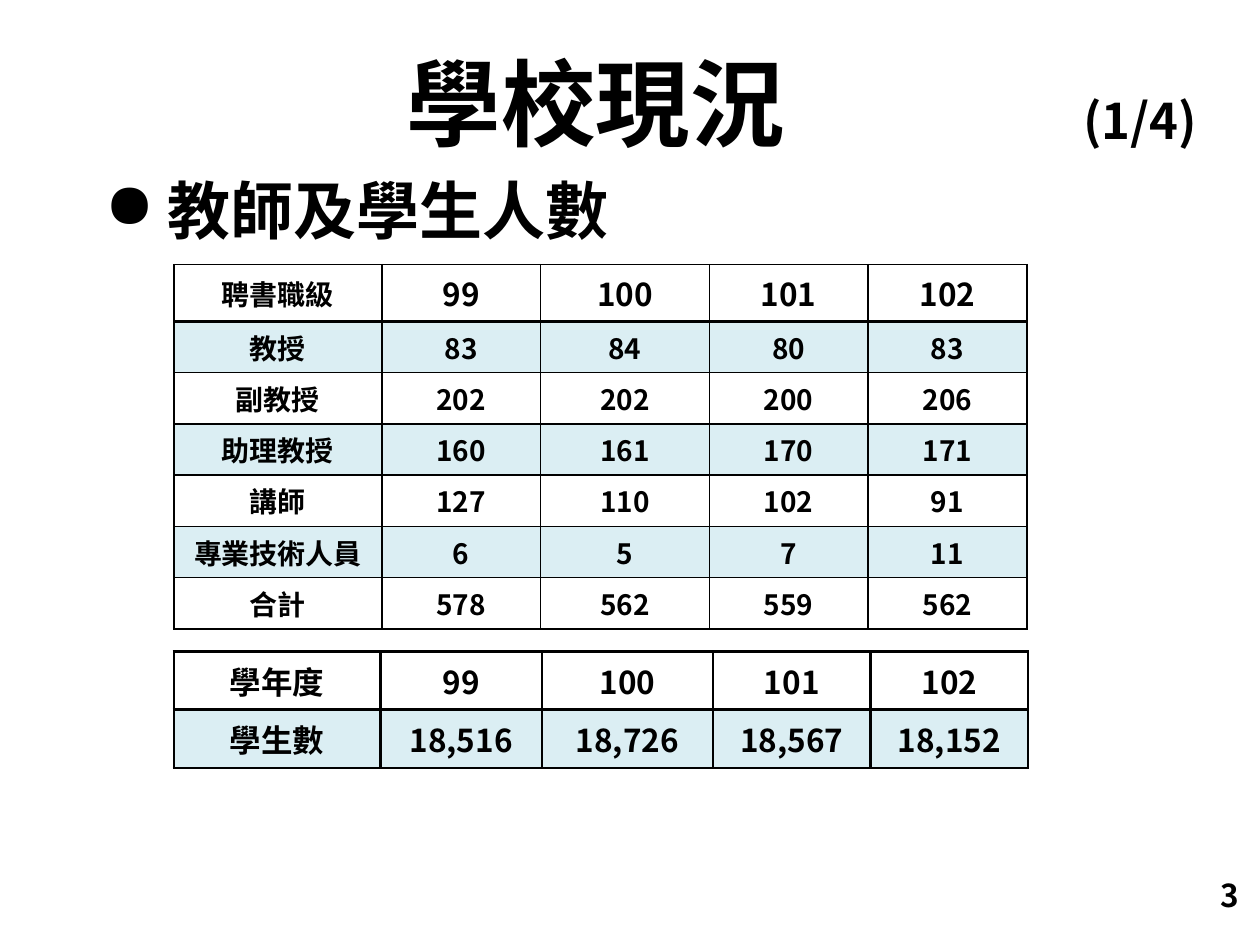
from lxml import etree
from pptx import Presentation
from pptx.dml.color import RGBColor
from pptx.enum.text import MSO_ANCHOR, PP_ALIGN
from pptx.oxml.ns import qn
from pptx.util import Inches, Pt

LEFT, CENTER, RIGHT = PP_ALIGN.LEFT, PP_ALIGN.CENTER, PP_ALIGN.RIGHT
TOP, MIDDLE = MSO_ANCHOR.TOP, MSO_ANCHOR.MIDDLE

THEME = {
    "font": "Noto Sans CJK SC", "ink": "000000", "band": "4BACC6", "band_alpha": "20000",
    "title": 54, "counter": 28, "subtitle": 36, "header": 18, "body": 16, "number": 18,
}

presentation = Presentation()
presentation.slide_width, presentation.slide_height = Inches(10), Inches(7.5)
slide = presentation.slides.add_slide(presentation.slide_layouts[6])

# Grid of 100 columns by 75 rows
COLUMN = presentation.slide_width / 100
ROW = presentation.slide_height / 75


def add_run(paragraph, text, size):
    run = paragraph.add_run()
    run.text = text
    for name, value in {"name": THEME["font"], "size": Pt(size), "bold": True}.items():
        setattr(run.font, name, value)
    run.font.color.rgb = RGBColor.from_string(THEME["ink"])
    etree.SubElement(run._r.get_or_add_rPr(), qn("a:ea"), typeface=THEME["font"])


def style_cell(cell, banded, widths):
    """Fill a cell and draw its left, right, top and bottom borders."""
    if banded:
        cell.fill.solid()
        cell.fill.fore_color.rgb = RGBColor.from_string(THEME["band"])
    else:
        cell.fill.background()
    properties = cell._tc.get_or_add_tcPr()
    for color in properties.iter(qn("a:srgbClr")):
        etree.SubElement(color, qn("a:alpha"), val=THEME["band_alpha"])
    for position, (side, width) in enumerate(zip("LRTB", widths)):
        line = etree.Element(qn(f"a:ln{side}"), w=str(Pt(width)))
        fill = etree.SubElement(line, qn("a:solidFill"))
        etree.SubElement(fill, qn("a:srgbClr"), val=THEME["ink"])
        properties.insert(position, line)


# Title with page counter, subtitle and slide number: box in grid units, then text runs
texts = [
    ((9.8, 0, 87.4, 16.1), MIDDLE, LEFT,
     [("\t學校現況\t", THEME["title"]), ("(1/4)", THEME["counter"])]),
    ((-6.7, 13.1, 70, 7.4), TOP, CENTER, [("教師及學生人數", THEME["subtitle"])]),
    ((76, 69, 23.3, 4), MIDDLE, RIGHT, [("3", THEME["number"])]),
]
paragraphs = []
for (left, top, width, height), anchor, alignment, runs in texts:
    box = slide.shapes.add_textbox(
        int(left * COLUMN), int(top * ROW), int(width * COLUMN), int(height * ROW))
    box.text_frame.word_wrap = True
    box.text_frame.vertical_anchor = anchor
    paragraph = box.text_frame.paragraphs[0]
    paragraph.alignment = alignment
    paragraphs.append(paragraph)
    for text, size in runs:
        add_run(paragraph, text, size)
title, subtitle, number = paragraphs

# Tab stops centre the title and push the counter to the right
tabs = etree.SubElement(title._p.get_or_add_pPr(), qn("a:tabLst"))
for stop, kind in ((36.5, "ctr"), (84.2, "r")):
    etree.SubElement(tabs, qn("a:tab"), pos=str(int(stop * COLUMN)), algn=kind)

# Hanging bullet
bullet = subtitle._p.get_or_add_pPr()
bullet.set("marL", str(int(5 * COLUMN)))
bullet.set("indent", str(int(-5 * COLUMN)))
etree.SubElement(bullet, qn("a:buChar"), char="●")

# Staff by rank and students by academic year
tables = [
    {"top": 21, "columns": (16.5, 12.6, 13.4, 12.6, 12.6), "rows": [4.5] + [4.07] * 6,
     "line": 1, "rule": 2.25, "inset": 0.4, "anchor": MIDDLE,
     "label": THEME["body"], "body": THEME["body"],
     "cells": [
         ("聘書職級", "99", "100", "101", "102"),
         ("教授", "83", "84", "80", "83"),
         ("副教授", "202", "202", "200", "206"),
         ("助理教授", "160", "161", "170", "171"),
         ("講師", "127", "110", "102", "91"),
         ("專業技術人員", "6", "5", "7", "11"),
         ("合計", "578", "562", "559", "562"),
     ]},
    {"top": 51.7, "columns": (16.4, 12.8, 13.6, 12.5, 12.5), "rows": [4.62] * 2,
     "line": 1.5, "rule": 1.5, "inset": 0.5, "anchor": TOP,
     "label": THEME["header"], "body": THEME["header"],
     "cells": [
         ("學年度", "99", "100", "101", "102"),
         ("學生數", "18,516", "18,726", "18,567", "18,152"),
     ]},
]
for data in tables:
    frame = slide.shapes.add_table(
        len(data["rows"]), len(data["columns"]), int(13.8 * COLUMN), int(data["top"] * ROW),
        int(sum(data["columns"]) * COLUMN), int(sum(data["rows"]) * ROW))
    table = frame.table
    for column, width in zip(table.columns, data["columns"]):
        column.width = int(width * COLUMN)
    for row, height in zip(table.rows, data["rows"]):
        row.height = int(height * ROW)
    for r, values in enumerate(data["cells"]):
        above = data["rule"] if r == 1 else data["line"]
        below = data["rule"] if r == 0 else data["line"]
        for c, value in enumerate(values):
            cell = table.cell(r, c)
            cell.vertical_anchor = data["anchor"]
            cell.margin_top = cell.margin_bottom = int(data["inset"] * ROW)
            paragraph = cell.text_frame.paragraphs[0]
            paragraph.alignment = CENTER
            size = data["label"] if c == 0 else THEME["header"] if r == 0 else data["body"]
            add_run(paragraph, value, size)
            style_cell(cell, r % 2 == 1, (data["line"], data["line"], above, below))

presentation.save("out.pptx")
